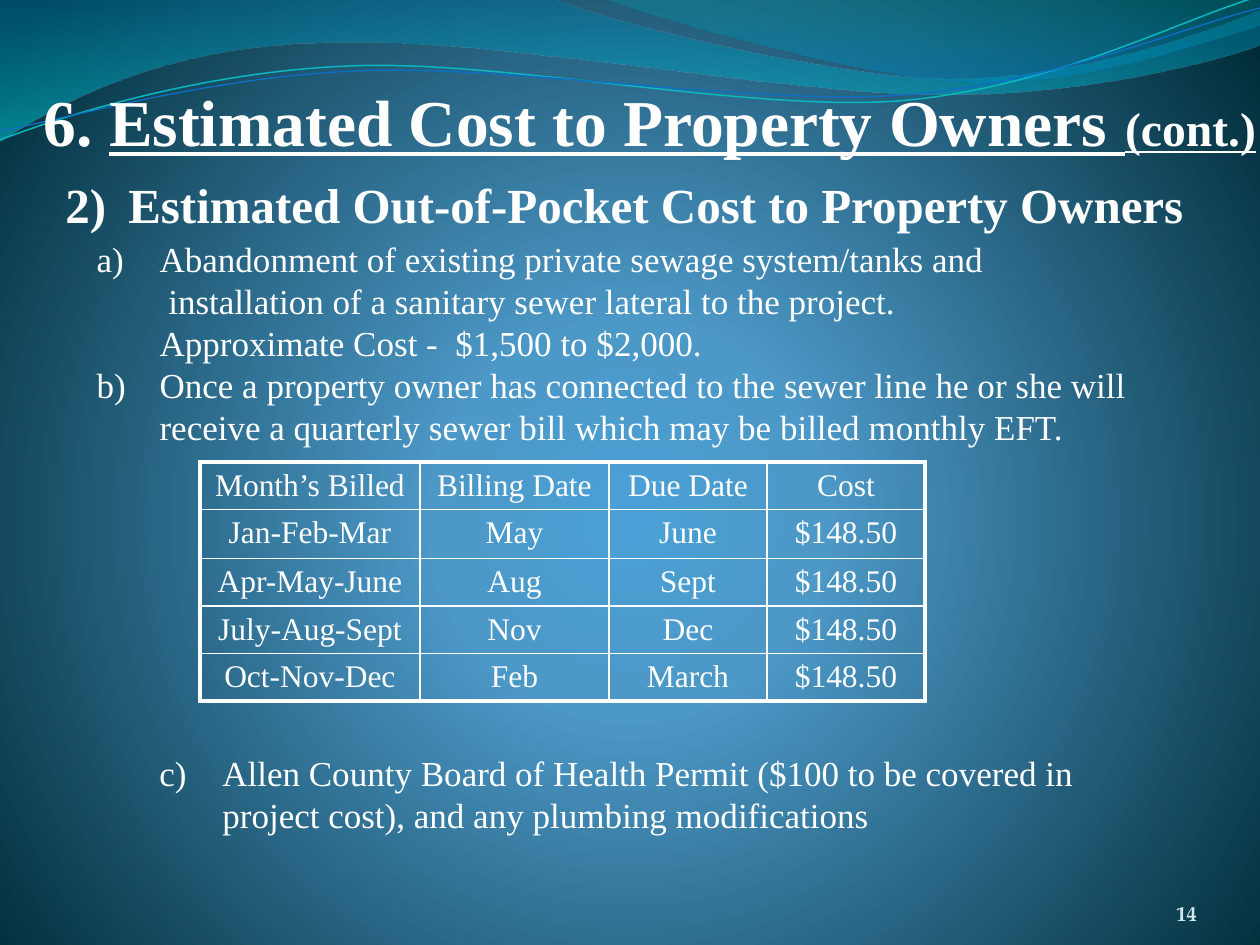
"""Build the slide on estimated sewer costs to property owners."""
import math
import pptx
import pptx.util
import pptx.dml.color
import pptx.enum.text
import pptx.oxml
import pptx.oxml.ns

PX = 914400 / 126
WHITE = "FFFFFF"
SERIF = "Times New Roman"
ALIGN = pptx.enum.text.PP_ALIGN
ANCHOR = pptx.enum.text.MSO_ANCHOR
NS = pptx.oxml.ns.nsdecls("a")

BACKGROUND = [(0, "4AA0D6", 100), (25, "4C98C7", 100), (100, "002C38", 100)]
GLOW = '<a:path path="circle"><a:fillToRect l="10000" t="110000" r="10000" b="100000"/></a:path>'
DOWN = '<a:lin ang="5400000" scaled="0"/>'
TILT = -2.7

BANDS = [
    ([(0, "0074A1", 45), (100, "00C6CF", 55)], (-1, -1, 1262, 144),
     [(0, 0), (554, -1), (600, 21, 837, 79, 955, 79), (1075, 79, 1207, 33, 1260, 11),
      (1261, 45), (1239, 55, 1096, 96, 940, 95), (783, 95, 481, 35, 324, 43),
      (163, 45, 58, 105, -1, 142), (0, 0)]),
    ([(0, "00A1A9", 30), (80, "008BBF", 45)], (604, -1, 656, 88),
     [(604, -1), (641, 14, 859, 78, 969, 82), (1079, 87, 1211, 40, 1260, 26),
      (1260, 0), (604, -1)]),
]
STRANDS = [
    ("0AB8BF", 0.85, (-2, 28, 1262, 89),
     [(0, 140), (60, 117, 199, 72, 349, 66), (498, 59, 747, 112, 898, 101),
      (1050, 89, 1182, 19, 1257, -3)]),
    ("0F6FC6", 0.75, (-2, 38, 1264, 73),
     [(0, 131), (59, 121, 207, 77, 357, 71), (508, 64, 752, 106, 903, 95),
      (1053, 84, 1186, 26, 1260, 8)]),
]

TITLE = [("6. ", 37.4, False), ("Estimated Cost to Property Owners ", 37.4, True),
         ("(cont.)", 27.2, True)]
HEADING = [("Estimated Out-of-Pocket Cost to Property Owners", "arabicParenR", 2)]
COSTS = [
    ("Abandonment of existing private sewage system/tanks and", "alphaLcParenR", 1),
    ("\t installation of a sanitary sewer lateral to the project.", None, None),
    ("\tApproximate Cost -  $1,500 to $2,000.", None, None),
    ("Once a property owner has connected to the sewer line he or she will "
     "receive a quarterly sewer bill which may be billed monthly EFT.", "alphaLcParenR", 2),
]
PERMIT = [("Allen County Board of Health Permit ($100 to be covered in project cost), "
           "and any plumbing modifications", "alphaLcParenR", 3)]
BILLING = [
    ("Month’s Billed", "Billing Date", "Due Date", "Cost"),
    ("Jan-Feb-Mar", "May", "June", "$148.50"),
    ("Apr-May-June", "Aug", "Sept", "$148.50"),
    ("July-Aug-Sept", "Nov", "Dec", "$148.50"),
    ("Oct-Nov-Dec", "Feb", "March", "$148.50"),
]
COLUMNS = [220, 189, 158, 158]
ROWS = [47, 49, 47, 47, 47]


def px(n):
    return pptx.util.Emu(round(n * PX))


def color(value):
    return pptx.dml.color.RGBColor.from_string(value)


def add_run(p, text, size, font=SERIF, fill=WHITE, bold=False, underline=False):
    r = p.add_run()
    r.text = text
    r.font.size = pptx.util.Pt(size)
    r.font.name = font
    r.font.bold = bold
    r.font.underline = underline
    r.font.color.rgb = color(fill)


def set_gradient(fill, element, stops, shade):
    fill.solid()
    old = element.find(".//" + pptx.oxml.ns.qn("a:solidFill"))
    marks = "".join(f'<a:gs pos="{pos * 1000}"><a:srgbClr val="{c}">'
                    f'<a:alpha val="{alpha * 1000}"/></a:srgbClr></a:gs>'
                    for pos, c, alpha in stops)
    old.getparent().replace(old, pptx.oxml.parse_xml(
        f'<a:gradFill {NS} rotWithShape="1"><a:gsLst>{marks}</a:gsLst>{shade}</a:gradFill>'))


def add_wave(s, box, outline, close, tilt=0):
    left, top, width, height = box
    cx, cy = left + width / 2, top + height / 2
    cos, sin = math.cos(math.radians(tilt)), math.sin(math.radians(tilt))

    def point(x, y):
        dx, dy = x - cx, y - cy
        return (px(width / 2 + dx * cos + dy * sin),
                px(height / 2 - dx * sin + dy * cos))

    steps = ""
    for i, part in enumerate(outline):
        tag = "moveTo" if i == 0 else "lnTo" if len(part) == 2 else "cubicBezTo"
        pairs = [point(x, y) for x, y in zip(part[::2], part[1::2])]
        steps += f"<a:{tag}>" + "".join(f'<a:pt x="{x}" y="{y}"/>' for x, y in pairs) + f"</a:{tag}>"
    steps += "<a:close/>" if close else ""

    builder = s.shapes.build_freeform(0, 0)
    builder.add_line_segments([(px(width), px(height))], close=close)
    sp = builder.convert_to_shape()
    sp.left, sp.top, sp.width, sp.height = map(px, box)
    sp.rotation = tilt
    sp.shadow.inherit = False
    old = sp._element.find(".//" + pptx.oxml.ns.qn("a:path"))
    old.getparent().replace(old, pptx.oxml.parse_xml(
        f'<a:path {NS} w="{px(width)}" h="{px(height)}">{steps}</a:path>'))
    return sp


def place(sp, left, top, width, height):
    sp.left, sp.top, sp.width, sp.height = map(px, (left, top, width, height))
    sp.text_frame.word_wrap = True
    sp.text_frame.auto_size = pptx.enum.text.MSO_AUTO_SIZE.NONE
    return sp.text_frame


def add_text(s, *box):
    return place(s.shapes.add_textbox(0, 0, 0, 0), *box)


def write_list(tf, items, size, bold=False):
    for i, (text, scheme, start) in enumerate(items):
        p = tf.paragraphs[0] if i == 0 else tf.add_paragraph()
        p.space_before = pptx.util.Pt(0)
        pPr = p._p.get_or_add_pPr()
        pPr.set("marL", str(px(63)))
        pPr.set("indent", str(px(-63)))
        bullet = f'buAutoNum {NS} type="{scheme}" startAt="{start}"' if scheme else f"buNone {NS}"
        if scheme:
            pPr.append(pptx.oxml.parse_xml(f'<a:buFont {NS} typeface="{SERIF}"/>'))
        pPr.append(pptx.oxml.parse_xml(f"<a:{bullet}/>"))
        add_run(p, text, size, bold=bold)


def set_borders(cell, heavy):
    tcPr = cell._tc.get_or_add_tcPr()
    for side in "LRTB":
        width = pptx.util.Pt(2.25 if side in heavy else 1)
        tcPr.append(pptx.oxml.parse_xml(
            f'<a:ln{side} {NS} w="{width}"><a:solidFill><a:srgbClr val="{WHITE}"/>'
            f'</a:solidFill></a:ln{side}>'))


def add_billing(s, left, top):
    table = s.shapes.add_table(len(ROWS), len(COLUMNS), px(left), px(top),
                               px(sum(COLUMNS)), px(sum(ROWS))).table
    table.first_row = table.horz_banding = False
    for column, width in zip(table.columns, COLUMNS):
        column.width = px(width)
    for i, (row, height) in enumerate(zip(BILLING, ROWS)):
        table.rows[i].height = px(height)
        for j, text in enumerate(row):
            cell = table.cell(i, j)
            edges = {"T": i == 0, "B": i == len(ROWS) - 1,
                     "L": j == 0, "R": j == len(COLUMNS) - 1}
            set_borders(cell, [side for side, outer in edges.items() if outer])
            cell.fill.background()
            p = cell.text_frame.paragraphs[0]
            p.alignment = ALIGN.CENTER
            p._p.get_or_add_pPr().append(pptx.oxml.parse_xml(
                f'<a:spcBef {NS}><a:spcPct val="20000"/></a:spcBef>'))
            add_run(p, text, 18)


def main():
    prs = pptx.Presentation()
    prs.slide_width, prs.slide_height = px(1260), px(945)
    s = prs.slides.add_slide(prs.slide_layouts[1])
    set_gradient(s.background.fill, s._element, BACKGROUND, GLOW)

    waves = []
    for stops, box, outline in BANDS:
        sp = add_wave(s, box, outline, True)
        set_gradient(sp.fill, sp._element, stops, DOWN)
        sp.line.fill.background()
        waves.append(sp)
    for stroke, width, box, outline in STRANDS:
        sp = add_wave(s, box, outline, False, TILT)
        sp.fill.background()
        sp.line.color.rgb = color(stroke)
        sp.line.width = pptx.util.Pt(width)
        waves.append(sp)
    for i, sp in enumerate(waves):
        s.shapes._spTree.insert(2 + i, sp._element)

    add_billing(s, 200, 462)
    write_list(place(s.placeholders[1], 84, 231, 1144, 224), COSTS, 20)

    tf = place(s.shapes.title, 31, 84, 1260, 105)
    tf.vertical_anchor = ANCHOR.TOP
    p = tf.paragraphs[0]
    p.alignment = ALIGN.LEFT
    p.line_spacing = 0.9
    for text, size, underline in TITLE:
        add_run(p, text, size, bold=True, underline=underline)

    tf = add_text(s, 1092, 876, 105, 50)
    tf.margin_left = tf.margin_right = tf.margin_top = tf.margin_bottom = 0
    tf.vertical_anchor = ANCHOR.BOTTOM
    tf.paragraphs[0].alignment = ALIGN.RIGHT
    add_run(tf.paragraphs[0], "14", 12, "TeX Gyre Pagella", "D1EAEE", bold=True)

    write_list(add_text(s, 53, 168, 1207, 72), HEADING, 28, bold=True)
    write_list(add_text(s, 147, 745, 945, 97), PERMIT, 20)
    prs.save("out.pptx")


if __name__ == "__main__":
    main()
